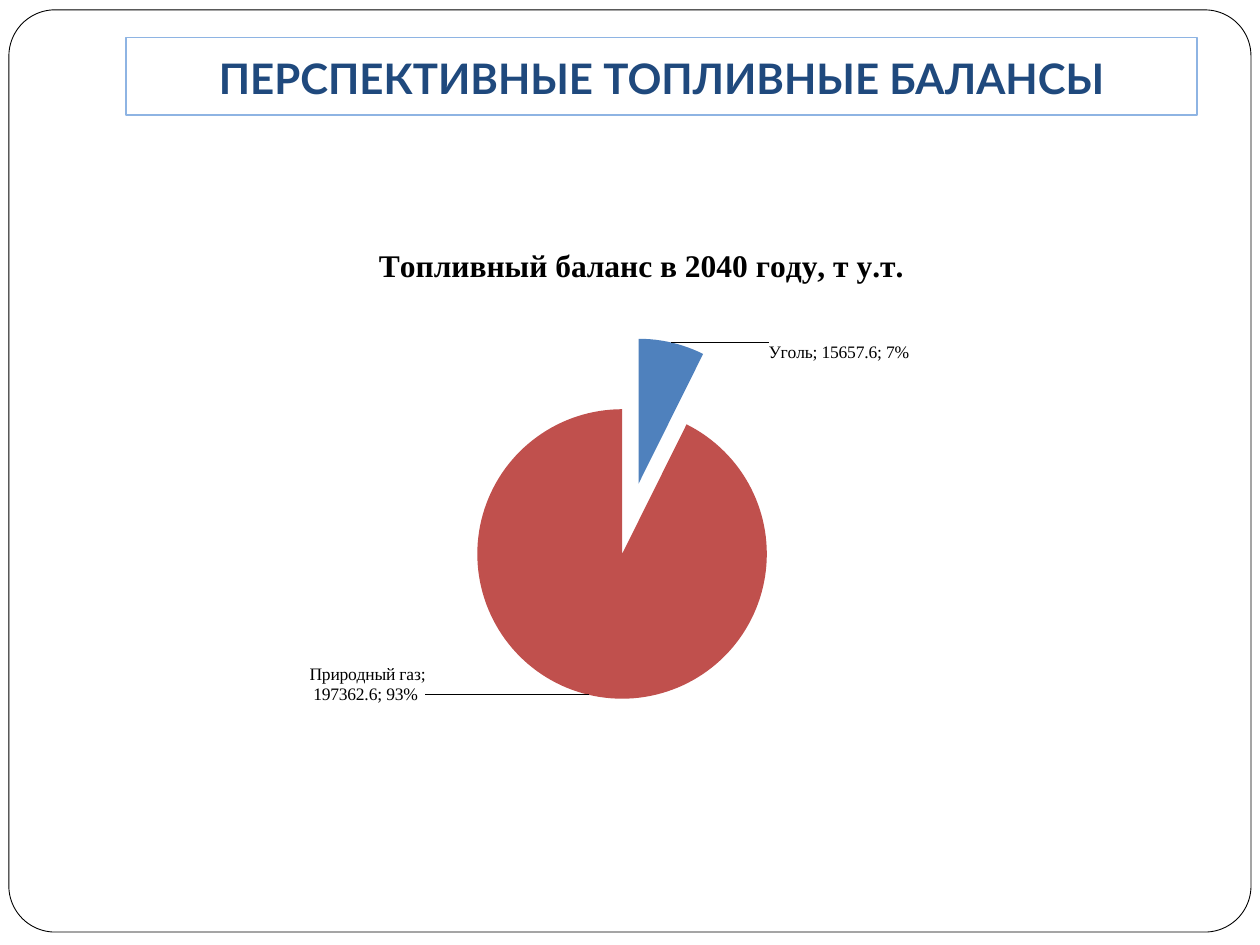
import pptx
import pptx.chart.data
import pptx.dml.color
import pptx.enum.chart
import pptx.enum.shapes
import pptx.enum.text
import pptx.oxml
import pptx.oxml.ns
import pptx.util

Cm, Pt = pptx.util.Cm, pptx.util.Pt

HUES = {
    "paper": "FFFFFF",
    "ink": "000000",
    "edge": "8EB4E3",
    "head": "1F497D",
    "coal": "4F81BD",
    "gas": "C0504D",
}
# Name, value, hue, label shift as a share of the chart
FUELS = [
    ("Уголь", 15657.6, "coal", (0.1, 0.05)),
    (" Природный газ", 197362.6, "gas", (-0.17, -0.07)),
]


def hue(name):
    return pptx.dml.color.RGBColor.from_string(HUES[name])


def style(font, face, size, name, bold=False):
    font.name, font.size, font.bold = face, Pt(size), bold
    font.color.rgb = hue(name)


def xml(tag, body):
    return pptx.oxml.parse_xml(
        f'<c:{tag} {pptx.oxml.ns.nsdecls("c")}>{body}</c:{tag}>')


def spot(**marks):
    """Manual layout from shares of the chart."""
    tags = "".join(f'<c:{key} val="{val}"/>' for key, val in marks.items())
    return f"<c:manualLayout>{tags}</c:manualLayout>"


def add_frame(slide, box):
    frame = slide.shapes.add_shape(
        pptx.enum.shapes.MSO_SHAPE.ROUNDED_RECTANGLE, *box)
    frame.adjustments[0] = 0.05
    frame.shadow.inherit = False
    frame.fill.solid()
    frame.fill.fore_color.rgb = hue("paper")
    frame.line.color.rgb = hue("ink")
    frame.line.width = Pt(0.5)
    # Behind the title
    slide.shapes.title.element.addprevious(frame.element)


def add_title(slide, box):
    title = slide.shapes.title
    title.left, title.top, title.width, title.height = box
    title.line.color.rgb = hue("edge")
    title.line.width = Pt(0.75)
    text = title.text_frame
    text.text = "ПЕРСПЕКТИВНЫЕ ТОПЛИВНЫЕ БАЛАНСЫ"
    text.word_wrap = True
    text.auto_size = pptx.enum.text.MSO_AUTO_SIZE.NONE
    text.vertical_anchor = pptx.enum.text.MSO_ANCHOR.BOTTOM
    text.margin_left = text.margin_right = text.margin_bottom = Cm(0.25)
    text.margin_top = Cm(0.13)
    line = text.paragraphs[0]
    line.alignment = pptx.enum.text.PP_ALIGN.CENTER
    style(line.runs[0].font, "Lato", 24, "head", True)


def add_labels(ser):
    # The values take the number format of the data, the shares stay percent
    show = (
        '<c:dLblPos val="bestFit"/><c:showLegendKey val="0"/>'
        '<c:showVal val="1"/><c:showCatName val="1"/><c:showSerName val="0"/>'
        '<c:showPercent val="1"/><c:showBubbleSize val="0"/>'
        "<c:separator>; </c:separator>")
    marks = "".join(
        f'<c:dLbl><c:idx val="{i}"/><c:layout>{spot(x=x, y=y)}</c:layout>'
        f"{show}</c:dLbl>"
        for i, (_, _, _, (x, y)) in enumerate(FUELS))
    lead = '<c:showLeaderLines val="1"/>'
    ser.xpath("c:cat")[0].addprevious(xml("dLbls", marks + show + lead))


def add_pie(slide, box):
    data = pptx.chart.data.CategoryChartData(number_format="0.0")
    data.categories = [fuel[0] for fuel in FUELS]
    data.add_series("Series 1", [fuel[1] for fuel in FUELS])
    chart = slide.shapes.add_chart(
        pptx.enum.chart.XL_CHART_TYPE.PIE, *box, data).chart
    chart.has_legend = False
    style(chart.font, "Times New Roman", 10, "ink")

    # Heading
    text = chart.chart_title.text_frame
    text.text = "Топливный баланс в 2040 году, т у.т."
    style(text.paragraphs[0].runs[0].font, "Times New Roman", 18, "ink", True)
    chart.chart_title.include_in_layout = False

    # Slices, pulled apart
    plot = chart.plots[0]
    plot.vary_by_categories = True
    for i, fuel in enumerate(FUELS):
        fill = plot.series[0].points[i].format.fill
        fill.solid()
        fill.fore_color.rgb = hue(fuel[2])
    ser = chart.element.xpath(".//c:ser")[0]
    burst = xml("explosion", "")
    burst.set("val", "25")
    ser.xpath("c:dPt")[0].addprevious(burst)
    add_labels(ser)

    # Places of heading and pie
    places = {
        "title": spot(xMode="edge", yMode="edge", x=0.22, y=0.03),
        "plotArea": spot(layoutTarget="inner", xMode="edge", yMode="edge",
                         x=0.3, y=0.21, w=0.38, h=0.68),
    }
    for tag, place in places.items():
        part = chart.element.xpath(f"c:chart/c:{tag}")[0]
        for old in part.xpath("c:layout"):
            part.remove(old)
        layout = xml("layout", place)
        if tag == "title":
            part.xpath("c:tx")[0].addnext(layout)
        else:
            part.insert(0, layout)


def main():
    deck = pptx.Presentation()
    deck.slide_width, deck.slide_height = Cm(25.4), Cm(19.05)
    slide = deck.slides.add_slide(deck.slide_layouts[5])
    add_frame(slide, (Cm(0.18), Cm(0.2), Cm(25.04), Cm(18.59)))
    add_title(slide, (Cm(2.54), Cm(0.76), Cm(21.59), Cm(1.56)))
    add_pie(slide, (Cm(3.3), Cm(4.52), Cm(19.2), Cm(10.8)))
    deck.save("out.pptx")


if __name__ == "__main__":
    main()
